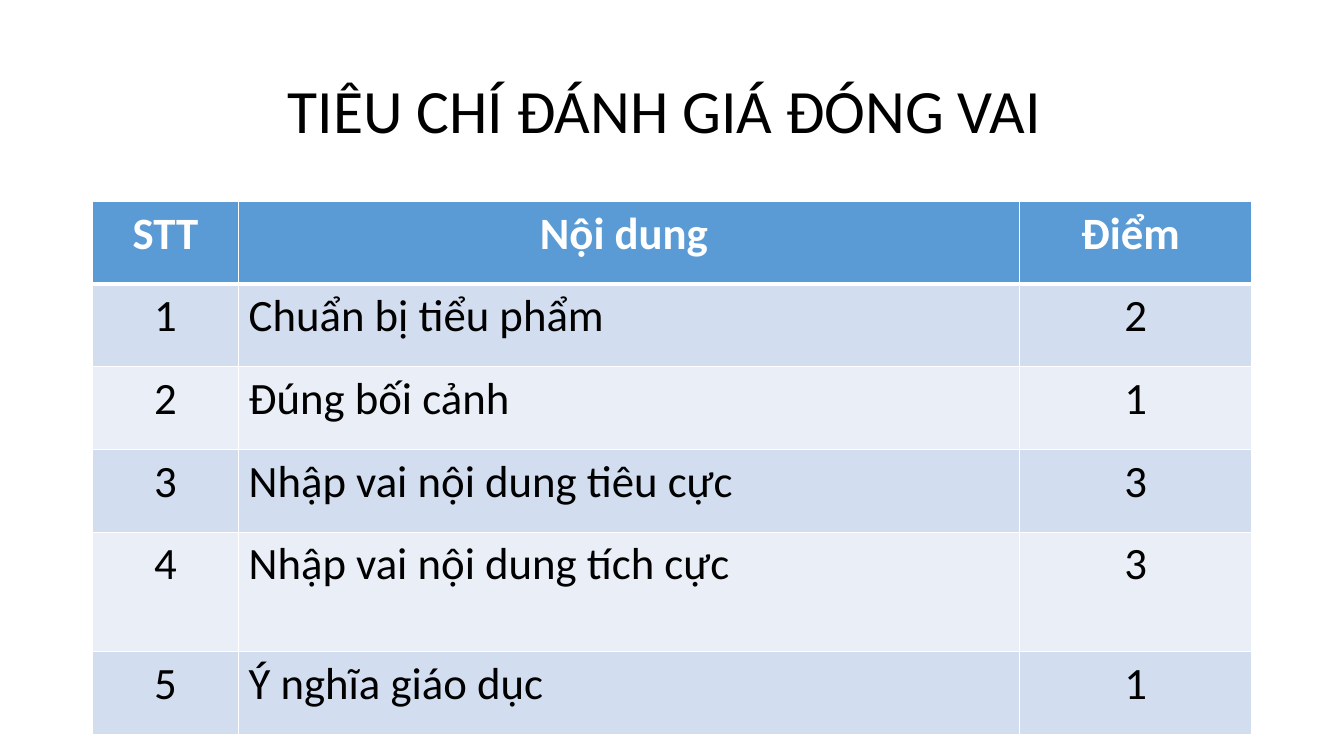
from lxml import etree
from pptx import Presentation
from pptx.dml.color import RGBColor
from pptx.enum.text import MSO_ANCHOR as Anchor, PP_ALIGN as Align
from pptx.oxml.ns import qn
from pptx.util import Pt

BLACK = RGBColor(0x00, 0x00, 0x00)
WHITE = RGBColor(0xFF, 0xFF, 0xFF)
BLUE = RGBColor(0x5B, 0x9B, 0xD5)
DARK = RGBColor(0xD2, 0xDE, 0xEF)
LIGHT = RGBColor(0xEA, 0xEF, 0xF7)

ROWS = [
    ("STT", "Nội dung ", "Điểm "),
    ("1", "Chuẩn bị tiểu phẩm", "2"),
    ("2", "Đúng bối cảnh", "1"),
    ("3", "Nhập vai nội dung tiêu cực", "3"),
    ("4", "Nhập vai nội dung tích cực", "3"),
    ("5", "Ý nghĩa giáo dục", "1"),
]
WIDTHS = [104.4, 558, 165.6]
HEIGHTS = [59.04, 59.04, 59.04, 59.04, 85.3, 59.04]


def write(frame, text, size, color, align, bold=False):
    para = frame.paragraphs[0]
    para.alignment = align
    run = para.add_run()
    run.text = text
    font = run.font
    font.name = "Calibri"
    font.size = Pt(size)
    font.bold = bold
    font.color.rgb = color
    return para


def edge(cell, side, width):
    """Draw one white border; call in the order L, R, T, B."""
    props = cell._tc.get_or_add_tcPr()
    line = etree.Element(qn(f"a:ln{side}"), w=str(Pt(width)))
    fill = etree.SubElement(line, qn("a:solidFill"))
    etree.SubElement(fill, qn("a:srgbClr"), val=str(WHITE))
    props.insert("LRTB".index(side), line)


deck = Presentation()
deck.slide_width = Pt(960)
deck.slide_height = Pt(540)
slide = deck.slides.add_slide(deck.slide_layouts[6])

title = slide.shapes.add_textbox(Pt(66), Pt(28.75), Pt(828), Pt(104.4))
frame = title.text_frame
frame.word_wrap = True
frame.vertical_anchor = Anchor.MIDDLE
para = write(frame, "TIÊU CHÍ ĐÁNH GIÁ ĐÓNG VAI ", 44, BLACK, Align.CENTER)
para.line_spacing = 0.9

table = slide.shapes.add_table(
    len(ROWS), len(WIDTHS), Pt(66), Pt(144), Pt(sum(WIDTHS)), Pt(sum(HEIGHTS))
).table
for col, width in zip(table.columns, WIDTHS):
    col.width = Pt(width)

for r, row in enumerate(ROWS):
    table.rows[r].height = Pt(HEIGHTS[r])
    head = r == 0
    shade = BLUE if head else DARK if r % 2 else LIGHT
    for c, text in enumerate(row):
        cell = table.cell(r, c)
        cell.fill.solid()
        cell.fill.fore_color.rgb = shade
        align = Align.LEFT if c == 1 and not head else Align.CENTER
        write(cell.text_frame, text, 32, WHITE if head else BLACK, align, head)
        edge(cell, "L", 1)
        edge(cell, "R", 1)
        edge(cell, "T", 3 if r == 1 else 1)
        edge(cell, "B", 3 if head else 1)

deck.save("out.pptx")
